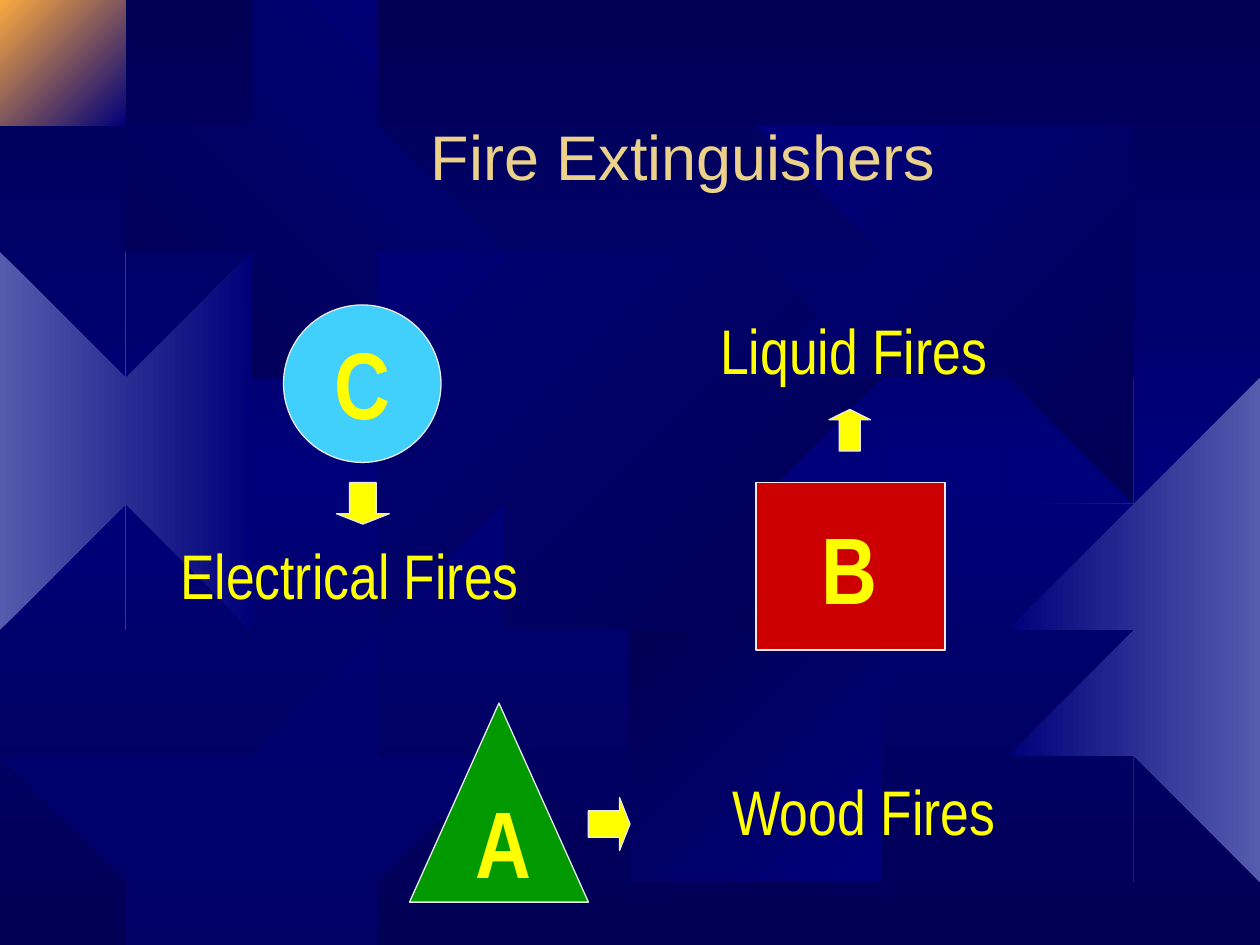
from copy import deepcopy
from dataclasses import dataclass

from lxml import etree
from pptx import Presentation
from pptx.dml.color import RGBColor
from pptx.enum.shapes import MSO_SHAPE
from pptx.enum.text import MSO_ANCHOR, MSO_AUTO_SIZE, PP_ALIGN
from pptx.oxml.ns import qn
from pptx.util import Inches, Pt

OVAL, TRIANGLE, RECTANGLE = MSO_SHAPE.OVAL, MSO_SHAPE.ISOSCELES_TRIANGLE, MSO_SHAPE.RECTANGLE
DOWN, RIGHT, UP = MSO_SHAPE.DOWN_ARROW, MSO_SHAPE.RIGHT_ARROW, MSO_SHAPE.UP_ARROW
CENTER, BOTTOM = PP_ALIGN.CENTER, MSO_ANCHOR.BOTTOM
FIT_SHAPE = MSO_AUTO_SIZE.SHAPE_TO_FIT_TEXT


@dataclass(frozen=True)
class Theme:
    navy: str = "000054"
    blue: str = "00007A"
    steel: str = "555BAD"
    orange: str = "FCAB40"
    sand: str = "EBD189"
    yellow: str = "FFFF00"
    outline: str = "EAEAEA"
    sky: str = "41CFFB"
    green: str = "009900"
    red: str = "CC0000"
    title_font: str = "Arial"
    body_font: str = "Arial Narrow"
    text_size: int = 36
    letter_size: int = 54


THEME = Theme()
WIDTH, HEIGHT = 10, 7.5

# Outline of a twelve-toothed gear, GEAR_SIZE units across
GEAR_SIZE = 4.01
GEAR_OUTLINE = [
    (2.55, 0.67), (2.23, 0.59), (2.19, 0), (1.8, 0.03), (1.77, 0.59), (1.51, 0.68),
    (1.13, 0.2), (0.87, 0.35), (1.12, 0.88), (0.94, 1.06), (0.38, 0.85), (0.25, 1.07),
    (0.68, 1.45), (0.61, 1.74), (0.01, 1.78), (0, 2.1), (0.61, 2.19), (0.67, 2.46),
    (0.22, 2.87), (0.38, 3.12), (0.88, 2.88), (1.07, 3.07), (0.81, 3.55), (1.06, 3.75),
    (1.51, 3.32), (1.77, 3.41), (1.83, 4), (2.22, 4.01), (2.26, 3.39), (2.59, 3.3),
    (2.99, 3.74), (3.25, 3.58), (2.99, 3.06), (3.16, 2.84), (3.68, 3.09), (3.84, 2.81),
    (3.36, 2.46), (3.42, 2.16), (4.01, 2.1), (4, 1.8), (3.41, 1.71), (3.35, 1.48),
    (3.83, 1.14), (3.67, 0.87), (3.13, 1.09), (2.96, 0.91), (3.23, 0.41), (2.97, 0.25),
]

# left, top, size, first colour, last colour, clockwise angle
GEARS = [
    (-0.49, 2.01, 2.96, THEME.steel, THEME.blue, 0),
    (0.12, -0.03, 0.91, THEME.orange, THEME.blue, 45),
    (1.3, 0.39, 2.48, THEME.navy, THEME.blue, 315),
    (2.77, 1.39, 4.01, THEME.blue, THEME.navy, 45),
    (0, 5.25, 3.74, THEME.blue, None, 0),
    (4.91, 4.84, 2.48, THEME.navy, THEME.blue, 45),
    (6.18, 0.53, 3.2, THEME.blue, THEME.navy, 45),
    (7.82, 2.8, 4.37, THEME.blue, THEME.steel, 0),
]

# sign shape, colour, sign box, letter, letter position, arrow shape, arrow box,
# label, label position
FIRE_CLASSES = [
    (OVAL, THEME.sky, (2.25, 2.42, 1.25, 1.25), "C", (2.55, 2.53),
     DOWN, (2.67, 3.83, 0.42, 0.33), "Electrical Fires", (1.25, 4.21)),
    (TRIANGLE, THEME.green, (3.25, 5.58, 1.42, 1.58), "A", (3.67, 6.17),
     RIGHT, (4.67, 6.33, 0.33, 0.42), "Wood Fires", (5.33, 6.08)),
    (RECTANGLE, THEME.red, (6, 3.83, 1.5, 1.33), "B", (6.42, 4),
     UP, (6.58, 3.25, 0.33, 0.33), "Liquid Fires", (5.25, 2.42)),
]


def color(value):
    return RGBColor.from_string(value)


def clip(points, axis, limit, sign):
    """Cut a polygon at a straight edge, keeping the side where sign * value >= sign * limit."""
    kept = []
    for start, end in zip(points[-1:] + points[:-1], points):
        start_in = sign * (start[axis] - limit) >= 0
        end_in = sign * (end[axis] - limit) >= 0
        if start_in != end_in:
            share = (limit - start[axis]) / (end[axis] - start[axis])
            kept.append(tuple(a + share * (b - a) for a, b in zip(start, end)))
        if end_in:
            kept.append(end)
    return kept


def set_stops(fill, colors, angle):
    """Spread the colours evenly over a gradient with a clockwise angle."""
    fill.gradient_angle = (360 - angle) % 360
    for index, (stop, value) in enumerate(zip(fill.gradient_stops, colors)):
        stop.color.rgb = color(value)
        stop.position = index / (len(colors) - 1)


def paint_background(slide):
    fill = slide.background.fill
    fill.gradient()
    stops = slide._element.xpath(".//p:bg//a:gsLst")[0]
    stops.insert(1, deepcopy(stops[0]))
    set_stops(fill, (THEME.navy, THEME.blue, THEME.navy), 90)


def add_gear(slide, left, top, size, first, last, angle):
    scale = size / GEAR_SIZE
    points = [(left + x * scale, top + y * scale) for x, y in GEAR_OUTLINE]
    for axis, limit, sign in ((0, 0, 1), (0, WIDTH, -1), (1, 0, 1), (1, HEIGHT, -1)):
        points = clip(points, axis, limit, sign)
    builder = slide.shapes.build_freeform(*points[0], scale=Inches(1))
    builder.add_line_segments(points[1:], close=True)
    gear = builder.convert_to_shape()
    gear.shadow.inherit = False
    gear.line.fill.background()
    if last:
        gear.fill.gradient()
        set_stops(gear.fill, (first, last), angle)
    else:
        gear.fill.solid()
        gear.fill.fore_color.rgb = color(first)
        solid = gear._element.spPr.find(qn("a:solidFill"))
        etree.SubElement(solid[0], qn("a:alpha")).set("val", "50000")


def write(shape, text, font, size, value, bold=False):
    paragraph = shape.text_frame.paragraphs[0]
    paragraph.text = text
    paragraph.alignment = CENTER
    run_font = paragraph.runs[0].font
    run_font.name, run_font.size, run_font.bold = font, Pt(size), bold
    run_font.color.rgb = color(value)
    return paragraph


def place_title(slide, text):
    title = slide.shapes.title
    title.left, title.top, title.width, title.height = map(Inches, (1.17, 0.33, 8.5, 1.25))
    title.text_frame.vertical_anchor = BOTTOM
    write(title, text, THEME.title_font, THEME.text_size, THEME.sand)
    slide.shapes._spTree.append(title._element)  # bring in front of the gears


def add_figure(shapes, kind, box, value):
    figure = shapes.add_shape(kind, *map(Inches, box))
    figure.shadow.inherit = False
    figure.fill.solid()
    figure.fill.fore_color.rgb = color(value)
    figure.line.color.rgb = color(THEME.outline)
    figure.line.width = Pt(0.75)
    return figure


def add_text(shapes, box, text, size, bold=False):
    text_box = shapes.add_textbox(*map(Inches, box))
    text_box.text_frame.word_wrap = False
    return text_box, write(text_box, text, THEME.body_font, size, THEME.yellow, bold)


def add_fire_class(slide, sign, value, sign_box, letter, letter_at,
                   arrow, arrow_box, label, label_at):
    shapes = slide.shapes.add_group_shape().shapes
    add_figure(shapes, sign, sign_box, value)
    letter_box, paragraph = add_text(shapes, (*letter_at, 0.65, 1), letter,
                                     THEME.letter_size, True)
    letter_box.text_frame.auto_size = FIT_SHAPE
    paragraph.space_before = Pt(3)
    add_text(shapes, (*label_at, 3.05, 0.62), label, THEME.text_size)
    pointer = add_figure(shapes, arrow, arrow_box, THEME.yellow)
    pointer.adjustments[0], pointer.adjustments[1] = 0.5, 0.25


def main():
    presentation = Presentation()
    presentation.slide_width, presentation.slide_height = Inches(WIDTH), Inches(HEIGHT)
    slide = presentation.slides.add_slide(presentation.slide_layouts[5])
    paint_background(slide)
    for gear in GEARS:
        add_gear(slide, *gear)
    place_title(slide, "Fire Extinguishers")
    for fire_class in FIRE_CLASSES:
        add_fire_class(slide, *fire_class)
    presentation.save("out.pptx")


if __name__ == "__main__":
    main()
